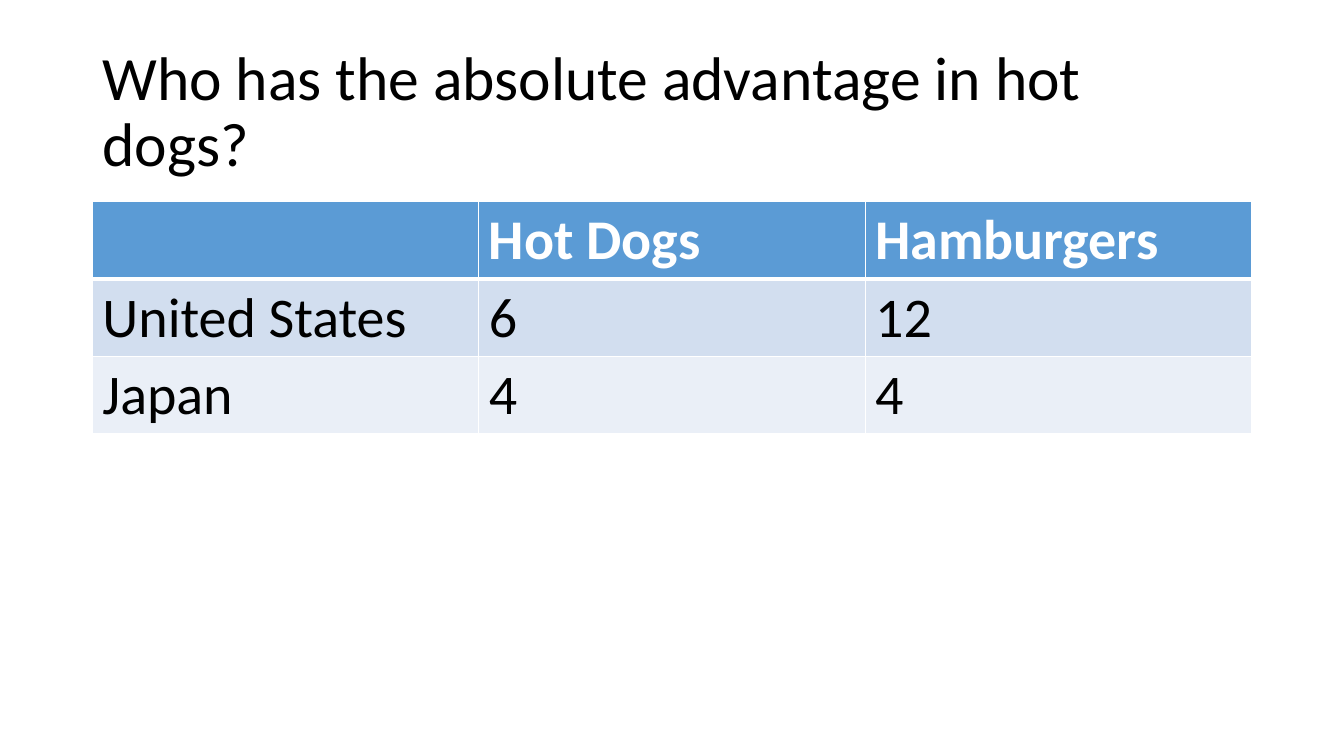
from dataclasses import dataclass

import lxml.etree
import pptx
import pptx.dml.color
import pptx.enum.text
import pptx.oxml.ns
import pptx.util

Pt = pptx.util.Pt
RGBColor = pptx.dml.color.RGBColor

BLACK = RGBColor(0x00, 0x00, 0x00)
WHITE = RGBColor(0xFF, 0xFF, 0xFF)
BLUE = RGBColor(0x5B, 0x9B, 0xD5)
BLUE_LIGHT = RGBColor(0xD2, 0xDE, 0xEF)
BLUE_PALE = RGBColor(0xEA, 0xEF, 0xF7)

LEFT, WIDTH = 66, 828
TABLE_TOP, ROW_HEIGHT = 144, 55.2


@dataclass(frozen=True)
class Row:
    texts: tuple[str, ...]
    fill: RGBColor
    color: RGBColor = BLACK
    bold: bool = False
    top_line: float = 1
    bottom_line: float = 1


ROWS = (
    Row(("", "Hot Dogs", "Hamburgers"), BLUE, WHITE, True, bottom_line=3),
    Row(("United States", "6", "12"), BLUE_LIGHT, top_line=3),
    Row(("Japan", "4", "4"), BLUE_PALE),
)


def write(p, text: str, size: float, color: RGBColor, bold: bool = False) -> None:
    font = p.font
    if text:
        r = p.add_run()
        r.text = text
        font = r.font
    for name, value in {"name": "Calibri", "size": Pt(size), "bold": bold}.items():
        setattr(font, name, value)
    font.color.rgb = color


def add_border(cell, side: str, width: float) -> None:
    qn = pptx.oxml.ns.qn
    ln = lxml.etree.Element(qn(f"a:{side}"), w=str(int(Pt(width))))
    fill = lxml.etree.SubElement(ln, qn("a:solidFill"))
    lxml.etree.SubElement(fill, qn("a:srgbClr"), val=str(WHITE))
    cell._tc.get_or_add_tcPr().append(ln)


def add_title(s, text: str) -> None:
    sp = s.shapes.add_textbox(Pt(LEFT), Pt(28.75), Pt(WIDTH), Pt(104.4))
    tf = sp.text_frame
    tf.word_wrap = True
    tf.vertical_anchor = pptx.enum.text.MSO_ANCHOR.MIDDLE
    p = tf.paragraphs[0]
    p.line_spacing = 0.9
    write(p, text, 44, BLACK)


def add_output_table(s, rows: tuple[Row, ...]) -> None:
    frame = s.shapes.add_table(
        len(rows), len(rows[0].texts),
        Pt(LEFT), Pt(TABLE_TOP), Pt(WIDTH), Pt(ROW_HEIGHT * len(rows)),
    )
    table = frame.table
    for i, row in enumerate(rows):
        table.rows[i].height = Pt(ROW_HEIGHT)
        borders = {"lnL": 1, "lnR": 1, "lnT": row.top_line, "lnB": row.bottom_line}
        for j, text in enumerate(row.texts):
            cell = table.cell(i, j)
            for side, width in borders.items():
                add_border(cell, side, width)
            cell.fill.solid()
            cell.fill.fore_color.rgb = row.fill
            write(cell.text_frame.paragraphs[0], text, 40, row.color, row.bold)


def main() -> None:
    prs = pptx.Presentation()
    prs.slide_width, prs.slide_height = Pt(960), Pt(540)
    s = prs.slides.add_slide(prs.slide_layouts[6])
    add_title(s, "Who has the absolute advantage in hot dogs?")
    add_output_table(s, ROWS)
    prs.save("out.pptx")


if __name__ == "__main__":
    main()
